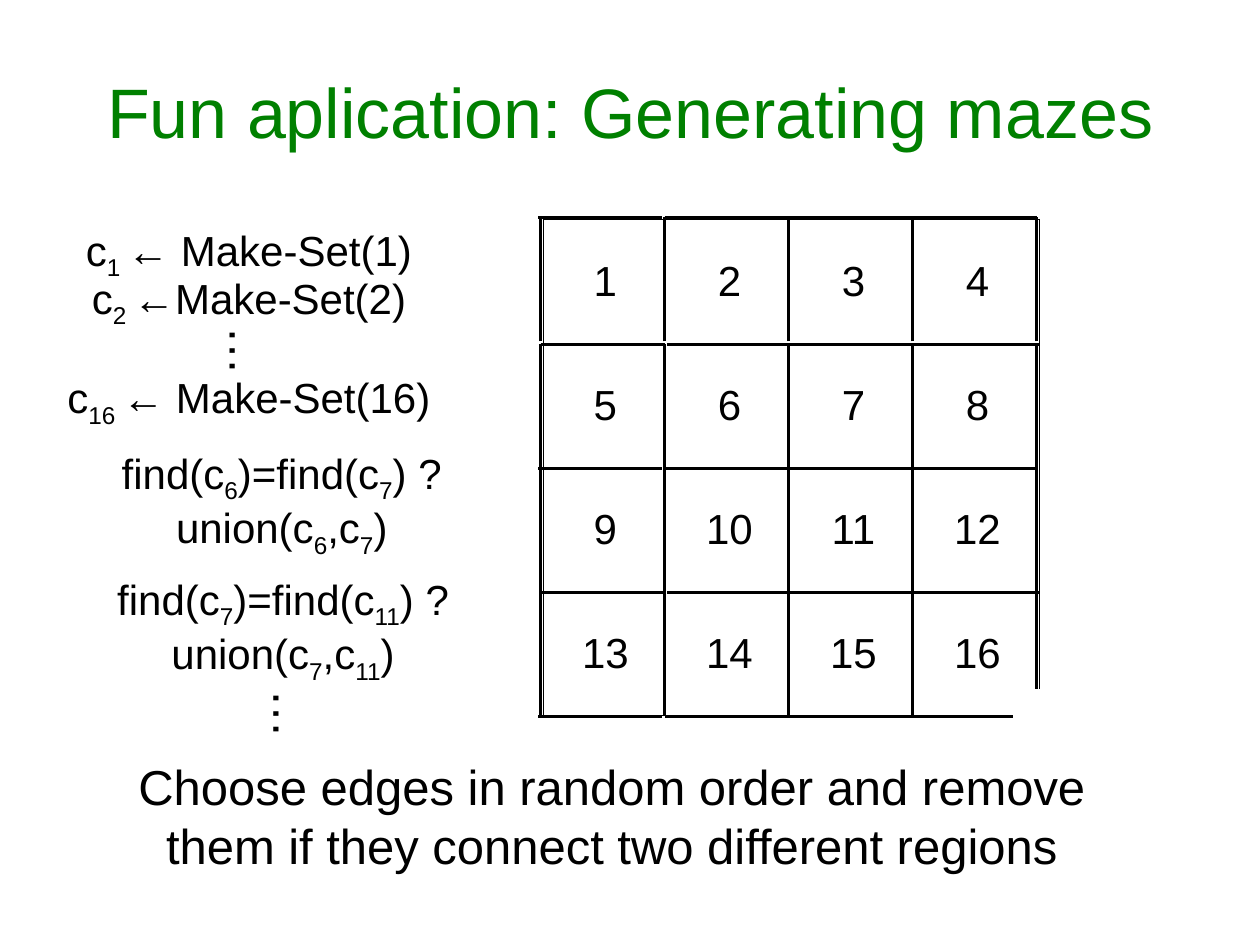
import pptx
import pptx.dml.color
import pptx.enum.shapes
import pptx.enum.text
import pptx.oxml.ns
import pptx.util
from lxml import etree

Pt = pptx.util.Pt
BLACK = pptx.dml.color.RGBColor(0, 0, 0)
WHITE = pptx.dml.color.RGBColor(255, 255, 255)
GREEN = pptx.dml.color.RGBColor(0, 128, 0)
MIDDLE = pptx.enum.text.MSO_ANCHOR.MIDDLE
TOP = pptx.enum.text.MSO_ANCHOR.TOP

GRID = 4
CELL = 70.87
SHIFT = 1.5  # how far the first wall of a run is pushed outwards


def add_element(parent, tag, **attributes):
    return etree.SubElement(parent, pptx.oxml.ns.qn(tag), **attributes)


class SlideBuilder:
    font_name = "Arial"
    text_size = 24
    large_size = 28
    wall_width = 1.75

    def __init__(self, slide):
        self.slide = slide

    def fill_paragraph(self, paragraph, markup, size, color=BLACK):
        """Fill a centred paragraph; parts in braces become subscripts."""
        paragraph.alignment = pptx.enum.text.PP_ALIGN.CENTER
        paragraph.font.name = self.font_name
        paragraph.font.size = Pt(size)
        paragraph.font.color.rgb = color
        for index, part in enumerate(markup.replace("}", "{").split("{")):
            if part:
                run = paragraph.add_run()
                run.text = part
                if index % 2:
                    run.font._element.set("baseline", "-25000")

    def text(self, markup, left, top, width, height, size=text_size,
             color=BLACK, anchor=TOP, rotation=0):
        shape = self.slide.shapes.add_textbox(Pt(left), Pt(top), Pt(width), Pt(height))
        shape.rotation = rotation
        frame = shape.text_frame
        frame.word_wrap = True
        frame.vertical_anchor = anchor
        self.fill_paragraph(frame.paragraphs[0], markup, size, color)

    def dots(self, left, top):
        self.text("…", left, top, 42.5, 41, self.large_size, rotation=90)

    def wall(self, x1, y1, x2, y2):
        connector = self.slide.shapes.add_connector(
            pptx.enum.shapes.MSO_CONNECTOR.STRAIGHT, Pt(x1), Pt(y1), Pt(x2), Pt(y2))
        connector.line.color.rgb = BLACK
        connector.line.width = Pt(self.wall_width)
        add_element(connector._element.spPr, "a:effectLst")

    def border(self, cell, side, visible):
        line = add_element(cell._tc.get_or_add_tcPr(), f"a:ln{side}", w=str(Pt(1)))
        if visible:
            fill = add_element(line, "a:solidFill")
            add_element(fill, "a:srgbClr", val=str(BLACK))
        else:
            add_element(line, "a:noFill")

    def number_table(self, left, top):
        table = self.slide.shapes.add_table(
            GRID, GRID, Pt(left), Pt(top), Pt(GRID * CELL), Pt(GRID * CELL)).table
        table.first_row = False
        table.horz_banding = False
        for index in range(GRID):
            table.columns[index].width = Pt(CELL)
            table.rows[index].height = Pt(CELL)
        last = GRID - 1
        for row in range(GRID):
            for column in range(GRID):
                cell = table.cell(row, column)
                cell.vertical_anchor = MIDDLE
                self.fill_paragraph(cell.text_frame.paragraphs[0],
                                    str(row * GRID + column + 1), self.text_size)
                # Borders come before the fill in the cell properties
                outer = {"L": column == 0, "R": column == last,
                         "T": row == 0, "B": row == last}
                for side, visible in outer.items():
                    self.border(cell, side, visible)
                cell.fill.background()

    def cover(self, left, top, size):
        shape = self.slide.shapes.add_shape(
            pptx.enum.shapes.MSO_SHAPE.RECTANGLE, Pt(left), Pt(top), Pt(size), Pt(size))
        shape.shadow.inherit = False
        shape.fill.solid()
        shape.fill.fore_color.rgb = WHITE
        shape.line.fill.background()


def main():
    presentation = pptx.Presentation()
    presentation.slide_width = Pt(720)
    presentation.slide_height = Pt(540)
    builder = SlideBuilder(presentation.slides.add_slide(presentation.slide_layouts[6]))

    # Title
    builder.text("Fun aplication: Generating mazes", 36, 32.4, 648, 62,
                 size=40, color=GREEN, anchor=MIDDLE)

    # Maze walls: every second row of horizontal walls sits a little further right
    wall_left, wall_top = 309, 125.75
    for line in range(GRID + 1):
        y = wall_top + line * CELL - (SHIFT if line == 0 else 0)
        x = wall_left + line * CELL
        row_left = wall_left + (SHIFT if line % 2 else 0)
        for step in range(GRID):
            shift = SHIFT if step == 0 else 0
            start_x = row_left + step * CELL - shift
            start_y = wall_top + step * CELL - shift
            builder.wall(start_x, y, start_x + CELL, y)
            builder.wall(x, start_y + CELL, x, start_y)

    # Cell numbers
    builder.number_table(310.5, 125.5)

    # Set creation
    builder.text("c{1 }← Make-Set(1)", 36, 124.5, 212.5, 36.5)
    builder.text("c{2 }←Make-Set(2)", 41.75, 152, 201, 36.5)
    builder.text("c{16 }← Make-Set(16)", 24.5, 208.8, 235.5, 36.5)
    builder.dots(121, 180)

    # Find and union steps
    for first, second, left, top in ((6, 7, 54.75, 252), (7, 11, 55.5, 324)):
        builder.text(f"find(c{{{first}}})=find(c{{{second}}}) ?", left, top, 212.5, 36)
        builder.text(f"union(c{{{first}}},c{{{second}}})", left, top + 31.3, 212.5, 36)
    builder.dots(146, 387.5)

    # Conclusion
    builder.text("Choose edges in random order and remove them if they "
                 "connect two different regions", 55.5, 429, 588, 74,
                 size=builder.large_size)

    # Maze exit
    builder.cover(579, 393.75, 28)

    presentation.save("out.pptx")


if __name__ == "__main__":
    main()
